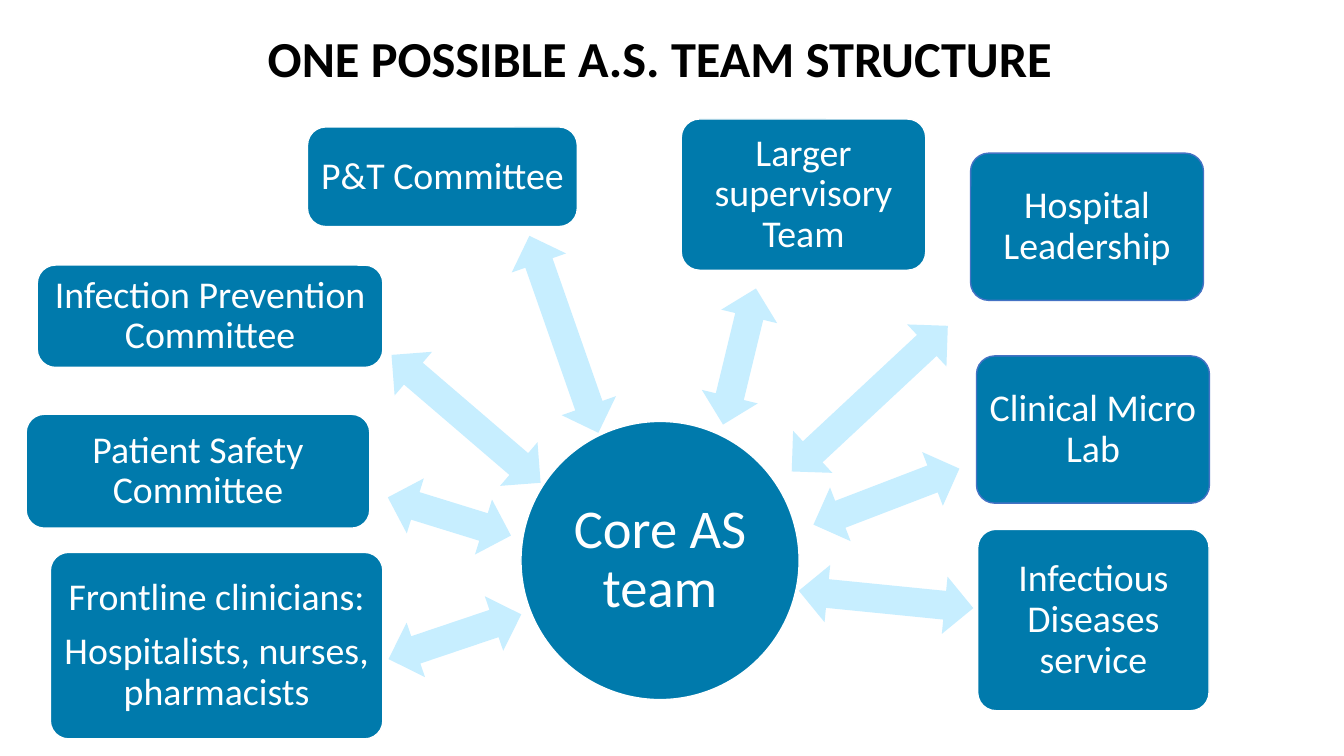
from pptx import Presentation
from pptx.dml.color import RGBColor
from pptx.enum.shapes import MSO_SHAPE
from pptx.enum.text import MSO_ANCHOR, PP_ALIGN
from pptx.util import Cm, Pt

ROUND = MSO_SHAPE.ROUNDED_RECTANGLE
OVAL = MSO_SHAPE.OVAL
ARROW = MSO_SHAPE.LEFT_RIGHT_ARROW
MIDDLE = MSO_ANCHOR.MIDDLE
CENTER = PP_ALIGN.CENTER

COLORS = {"ink": "000000", "white": "FFFFFF", "blue": "007AAC",
          "edge": "4472C4", "pale": "C7EEFF"}
RADIUS = 0.46
DEPTH = 1.45

TEAMS = [
    ("Frontline clinicians:\nHospitalists, nurses, pharmacists", (1.27, 13.92, 8.38, 4.7), "white"),
    ("Hospital Leadership", (24.46, 3.86, 5.87, 3.71), "edge"),
    ("Larger supervisory Team", (17.17, 3, 6.16, 3.81), "white"),
    ("Infectious Diseases service", (24.64, 13.34, 5.83, 4.57), "white"),
    ("P&T Committee", (7.75, 3.2, 6.8, 2.51), "white"),
    ("Infection Prevention Committee", (0.94, 6.68, 8.71, 2.58), "white"),
    ("Patient Safety Committee", (0.66, 10.44, 8.66, 2.87), "white"),
    ("Clinical Micro Lab", (24.61, 8.97, 5.87, 3.71), "edge"),
]
ARROWS = [
    (11.58, 7.7, 5.26, 70.7),
    (19.23, 9.32, 5.38, 317),
    (16.87, 8.26, 3.53, 103.6),
    (20.12, 14.38, 4.42, 5.7),
    (9.7, 12.29, 3.25, 17.2),
    (9.7, 15.32, 3.53, 341.4),
    (9.27, 9.83, 4.95, 40.6),
    (20.37, 11.79, 3.94, 339),
]


def tint(name):
    return RGBColor.from_string(COLORS[name])


def write(shape, text, size=27, color="white", bold=False, inset=0.0, line=0.9, after=0.35):
    frame = shape.text_frame
    frame.word_wrap = True
    frame.vertical_anchor = MIDDLE
    frame.margin_left = frame.margin_right = Cm(inset)
    frame.margin_top = frame.margin_bottom = Cm(inset)
    frame.text = text
    for para in frame.paragraphs:
        para.alignment = CENTER
        para.line_spacing = line
        para.space_after = Pt(round(size * after, 1))
        para.font.name = "Calibri"
        para.font.size = Pt(size)
        para.font.bold = bold
        para.font.color.rgb = tint(color)


def add_form(slide, kind, place, fill, edge=None):
    shape = slide.shapes.add_shape(kind, *map(Cm, place))
    shape.shadow.inherit = False
    shape.fill.solid()
    shape.fill.fore_color.rgb = tint(fill)
    if edge:
        shape.line.color.rgb = tint(edge)
        shape.line.width = Pt(1)
    else:
        shape.line.fill.background()
    return shape


def add_title(slide, text):
    box = slide.shapes.add_textbox(Cm(2.03), Cm(0.28), Cm(29.21), Cm(2.31))
    write(box, text, size=36, color="ink", bold=True, line=1.0, after=0)


def add_core(slide, text):
    core = add_form(slide, OVAL, (13.13, 10.62, 7.01, 7.01), "blue", "white")
    write(core, text, size=39)


def add_team(slide, text, place, edge):
    team = add_form(slide, ROUND, place, "blue", edge)
    team.adjustments[0] = RADIUS / min(place[2:])
    write(team, text, inset=0.17)


def add_arrow(slide, left, top, width, angle):
    arrow = add_form(slide, ARROW, (left, top, width, DEPTH), "pale")
    arrow.rotation = angle


def main():
    deck = Presentation()
    deck.slide_width = Cm(33.87)
    deck.slide_height = Cm(19.05)
    slide = deck.slides.add_slide(deck.slide_layouts[6])
    add_title(slide, "ONE POSSIBLE A.S. TEAM STRUCTURE")
    add_core(slide, "Core AS team")
    for team in TEAMS:
        add_team(slide, *team)
    for arrow in ARROWS:
        add_arrow(slide, *arrow)
    deck.save("out.pptx")


if __name__ == "__main__":
    main()
